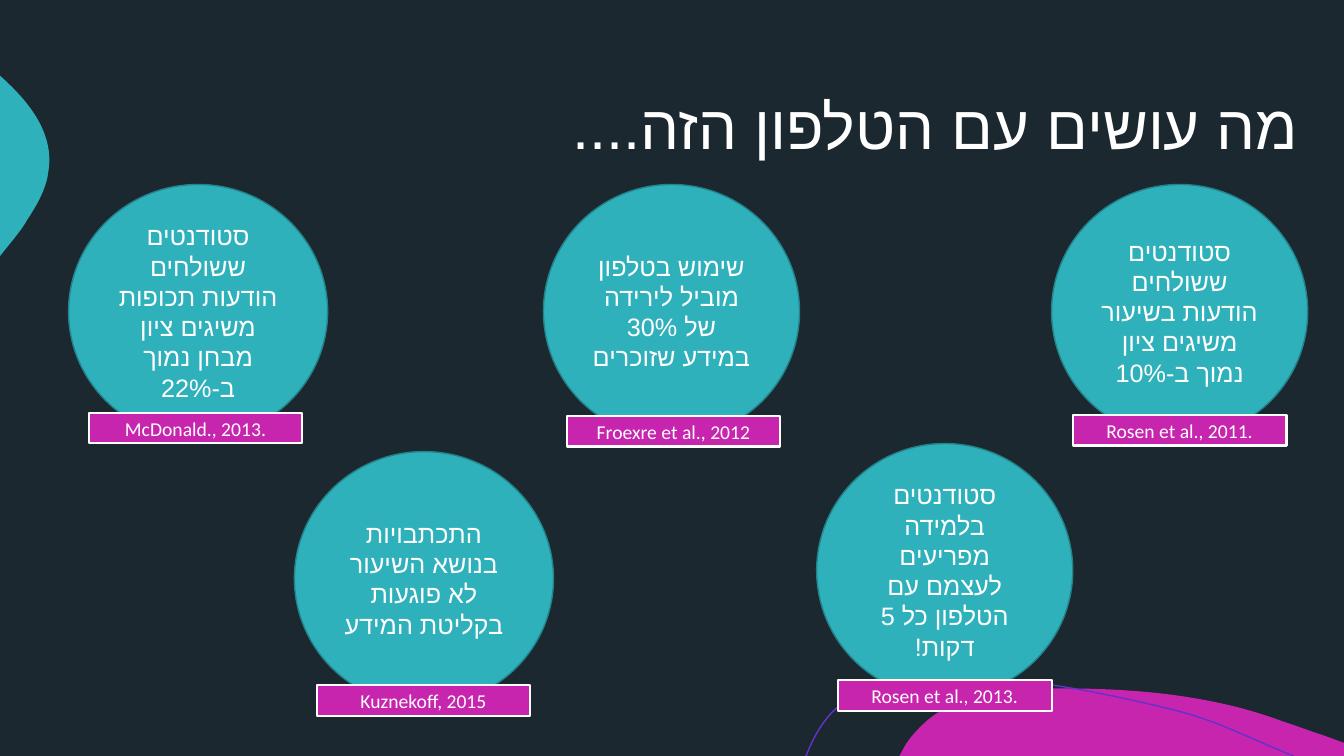
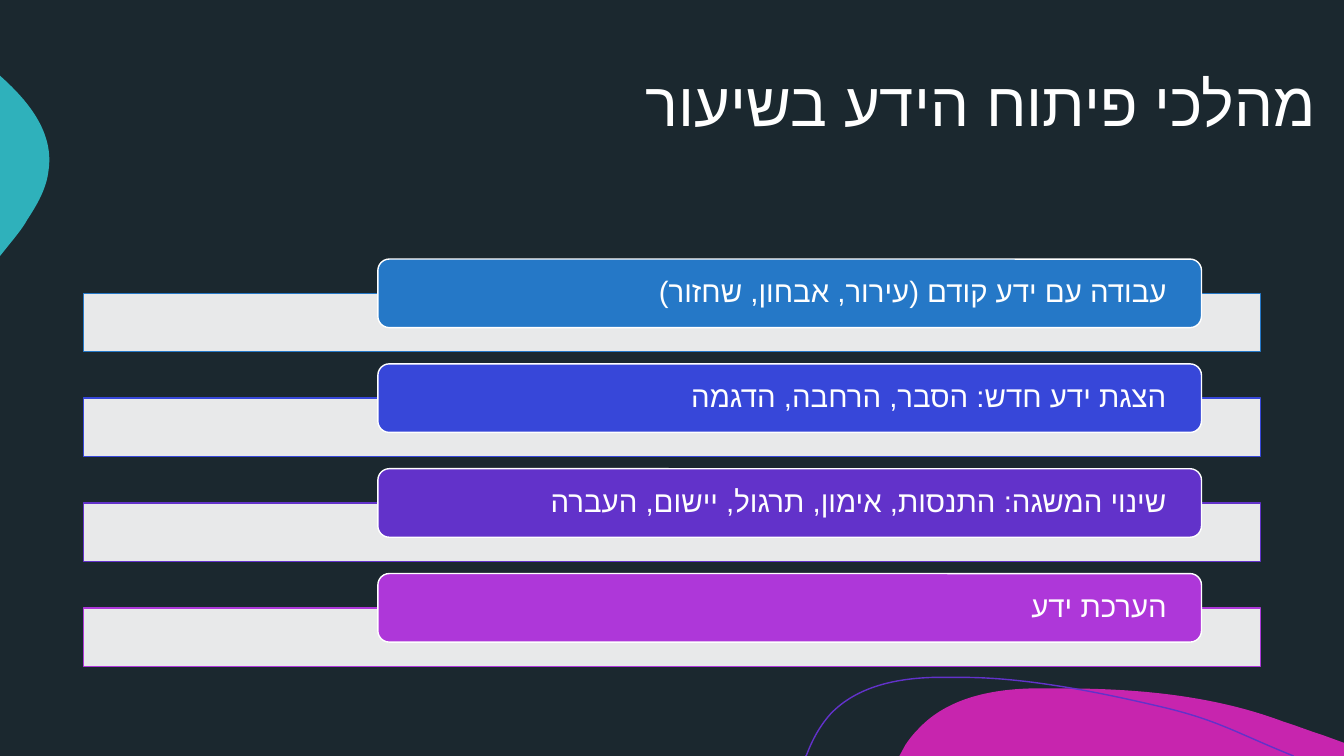
from lxml import etree
from pptx import Presentation
from pptx import util as u
from pptx.dml.color import RGBColor
from pptx.enum import shapes, text
from pptx.oxml.ns import qn

W, H = 13.33, 7.5
NIGHT, TEAL, TEAL_EDGE = "1B282F", "2FB1BB", "23838A"
MAGENTA, VIOLET, WHITE = "C725AE", "6232CA", "FFFFFF"
HEBREW_FONT = "Arial"
CENTER, RIGHT = text.PP_ALIGN.CENTER, text.PP_ALIGN.RIGHT
TITLE = dict(size=44, font="Lato", align=RIGHT, spacing=1.1, rtl=True)
FACT = dict(size=18, rtl=True)
SOURCE = dict(size=14)
STEP = dict(size=21, align=RIGHT, spacing=0.9, inset=0.31, rtl=True)

WAVES = [
    (MAGENTA, None, (10.54, 6.83), [
        (11.28, 6.83, 12.04, 6.9, 12.73, 7.16),
        (12.86, 7.2, 12.98, 7.25, 13.11, 7.29),
        (13.33, 7.37), (13.33, 7.5), (8.92, 7.5), (8.98, 7.39),
        (9.02, 7.33, 9.06, 7.28, 9.11, 7.23),
        (9.39, 6.93, 9.82, 6.84, 10.23, 6.83),
        (10.33, 6.83, 10.43, 6.83, 10.54, 6.83)]),
    (TEAL, None, (0, 0.75), [
        (0.01, 0.76),
        (0.3, 1.02, 0.54, 1.33, 0.48, 1.7),
        (0.46, 1.87, 0.37, 2.03, 0.27, 2.18),
        (0.24, 2.24, 0.17, 2.33, 0.08, 2.44),
        (0, 2.54)]),
    (None, VIOLET, (7.99, 7.5), [
        (8, 7.49),
        (8.06, 7.33, 8.14, 7.19, 8.24, 7.08),
        (8.5, 6.81, 8.89, 6.73, 9.26, 6.72),
        (9.55, 6.72),
        (10.22, 6.72, 11, 6.89, 11.55, 7.02),
        (12.09, 7.15, 12.26, 7.27, 12.83, 7.5)]),
]

FINDINGS = [
    ((10.43, 1.83, 2.54, 2.52), (10.64, 4.12), "Rosen et al., 2011.",
     "סטודנטים ששולחים הודעות בשיעור משיגים ציון נמוך ב-10%"),
    ((0.68, 1.83, 2.57, 2.52), (0.88, 4.1), "McDonald., 2013.",
     "סטודנטים ששולחים הודעות תכופות משיגים ציון מבחן נמוך ב-22%"),
    ((2.92, 4.48, 2.57, 2.52), (3.14, 6.8), "Kuznekoff, 2015",
     "התכתבויות בנושא השיעור לא פוגעות בקליטת המידע"),
    ((8.1, 4.4, 2.54, 2.52), (8.31, 6.75), "Rosen et al., 2013.",
     "סטודנטים בלמידה מפריעים לעצמם עם הטלפון כל 5 דקות!"),
    ((5.39, 1.83, 2.54, 2.52), (5.62, 4.13), "Froexre et al., 2012",
     "שימוש בטלפון מוביל לירידה של 30% במידע שזוכרים"),
]

STEPS = [
    ("2578C7", "עבודה עם ידע קודם (עירור, אבחון, שחזור)"),
    ("3747D9", "הצגת ידע חדש: הסבר, הרחבה, הדגמה"),
    (VIOLET, "שינוי המשגה: התנסות, אימון, תרגול, יישום, העברה"),
    ("AE37D9", "הערכת ידע"),
]


def set_color(fill, color):
    if color:
        fill.solid()
        fill.fore_color.rgb = RGBColor.from_string(color)
    else:
        fill.background()


def paint(sp, fill, line=None, width=1):
    sp.shadow.inherit = False
    set_color(sp.fill, fill)
    set_color(sp.line.fill, line)
    if line:
        sp.line.width = u.Pt(width)


def place(sp, box):
    for name, value in zip(("left", "top", "width", "height"), box):
        setattr(sp, name, u.Inches(value))


def write(sp, words, size, font="Calibri", align=CENTER, spacing=None,
          inset=0.1, rtl=False):
    tf = sp.text_frame
    frame = dict(word_wrap=True, auto_size=text.MSO_AUTO_SIZE.NONE,
                 vertical_anchor=text.MSO_ANCHOR.MIDDLE,
                 margin_left=u.Inches(inset), margin_right=u.Inches(inset))
    for name, value in frame.items():
        setattr(tf, name, value)
    p = tf.paragraphs[0]
    p.alignment, p.line_spacing = align, spacing
    r = p.add_run()
    r.text = words
    for name, value in dict(size=u.Pt(size), name=font).items():
        setattr(r.font, name, value)
    set_color(r.font.fill, WHITE)
    if rtl:
        p._p.get_or_add_pPr().set("rtl", "1")
        props = r._r.get_or_add_rPr()
        props.set("lang", "he-IL")
        etree.SubElement(props, qn("a:cs")).set("typeface", HEBREW_FONT)


def add_box(s, kind, box, fill, line, width=1):
    sp = s.shapes.add_shape(kind, *map(u.Inches, box))
    paint(sp, fill, line, width)
    return sp


def add_wave(s, fill, line, start, segments):
    builder = s.shapes.build_freeform(*map(u.Inches, start))
    builder.add_line_segments(
        [tuple(map(u.Inches, seg[-2:])) for seg in segments],
        close=fill is not None)
    sp = builder.convert_to_shape()
    paint(sp, fill, line)
    for edge, seg in zip(list(sp.element.iter(qn("a:lnTo"))), segments):
        if len(seg) == 6:
            curve = etree.Element(qn("a:cubicBezTo"))
            for x, y in zip(seg[::2], seg[1::2]):
                pt = etree.SubElement(curve, qn("a:pt"))
                pt.set("x", str(u.Inches(x) - sp.left))
                pt.set("y", str(u.Inches(y) - sp.top))
            edge.getparent().replace(edge, curve)
    return sp


def decorate_master(prs, s):
    master = prs.slide_master
    set_color(master.background.fill, NIGHT)
    for wave in WAVES:
        master.element.cSld.spTree.append(add_wave(s, *wave).element)


def add_titled_slide(prs, words, left, top):
    s = prs.slides.add_slide(prs.slide_layouts[5])
    place(s.shapes.title, (left, top, 11.67, 1.67))
    write(s.shapes.title, words, **TITLE)
    return s


def add_finding(s, box, tag_corner, source, fact):
    circle = add_box(s, shapes.MSO_SHAPE.OVAL, box, TEAL, TEAL_EDGE)
    write(circle, fact, **FACT)
    tag = add_box(s, shapes.MSO_SHAPE.RECTANGLE, (*tag_corner, 2.12, 0.3),
                  MAGENTA, WHITE, 1.5)
    write(tag, source, **SOURCE)


def add_step(s, box, color, words):
    x, y, w, h = box
    bar = add_box(s, shapes.MSO_SHAPE.RECTANGLE, (x, y + 0.34, w, h - 0.34),
                  WHITE, color)
    tint = bar.element.spPr.find(qn("a:solidFill"))[0]
    etree.SubElement(tint, qn("a:alpha")).set("val", "90000")
    label = add_box(s, shapes.MSO_SHAPE.ROUNDED_RECTANGLE,
                    (x + 0.25 * w, y, 0.7 * w, 0.68), color, WHITE)
    write(label, words, **STEP)


def add_steps(s, left, top, width, pitch, height):
    for row, (color, words) in enumerate(STEPS):
        add_step(s, (left, top + row * pitch, width, height), color, words)


def main():
    prs = Presentation()
    prs.slide_width, prs.slide_height = u.Inches(W), u.Inches(H)

    s = add_titled_slide(prs, "מה עושים עם הטלפון הזה....", 1.32, 0.37)
    decorate_master(prs, s)
    for finding in FINDINGS:
        add_finding(s, *finding)

    s = add_titled_slide(prs, "מהלכי פיתוח הידע בשיעור", 1.49, 0.14)
    add_steps(s, 0.83, 2.57, 11.67, 1.04, 0.92)

    prs.save("out.pptx")


if __name__ == "__main__":
    main()
